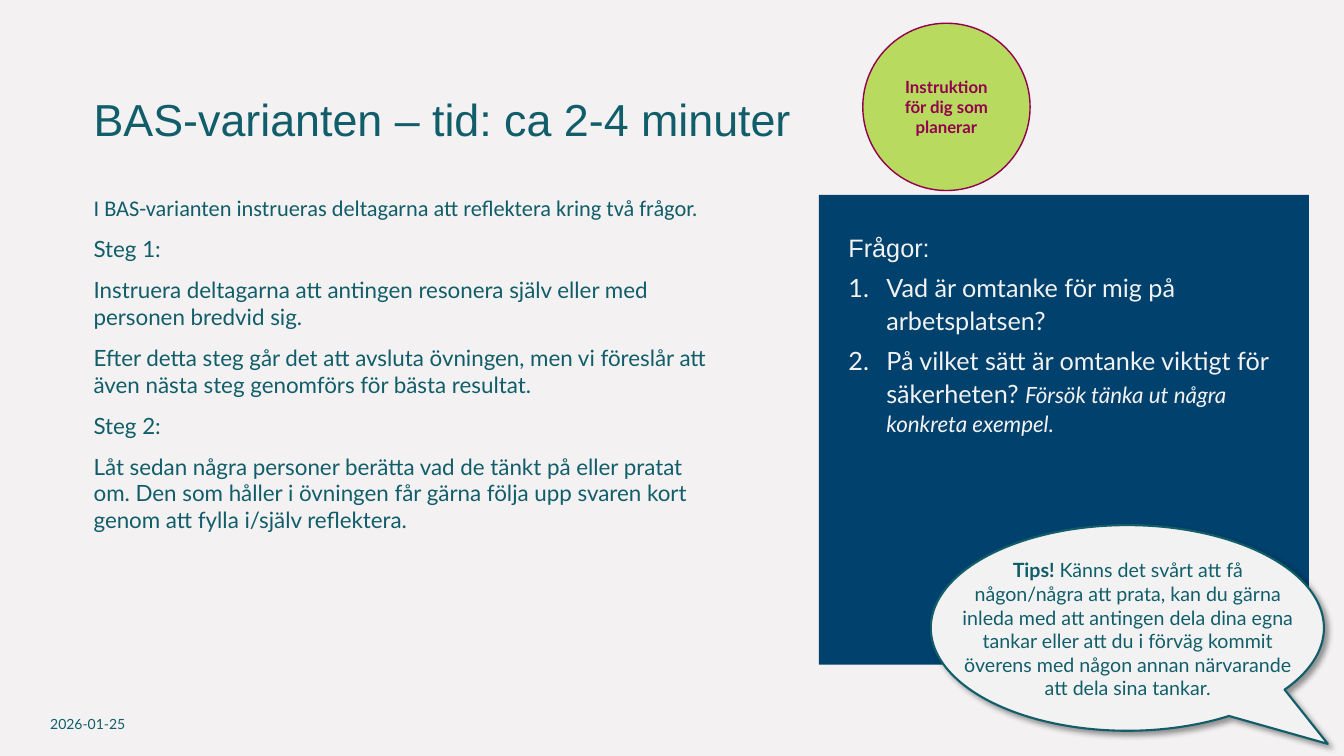
from lxml import etree
from pptx import Presentation
from pptx import util as u
from pptx.dml.color import RGBColor
from pptx.enum import shapes, text
from pptx.oxml.ns import qn

THEME = {
    "paper": "F3F1F1", "teal": "115E6A", "navy": "00416D", "light": "F2F2F2",
    "lime": "B8DA5E", "plum": "92004D", "shadow": "000000",
    "heading": "Arial", "body": "Lato", "intro": "Calibri",
    "title": 32, "question": 18, "text": 16, "tip": 14, "badge": 12, "date": 10,
}

TITLE = "BAS-varianten – tid: ca 2-4 minuter"
INTRO = "I BAS-varianten instrueras deltagarna att reflektera kring två frågor."
STEPS = [
    "Steg 1:",
    "Instruera deltagarna att antingen resonera själv eller med personen bredvid sig.",
    "Efter detta steg går det att avsluta övningen, men vi föreslår att även nästa "
    "steg genomförs för bästa resultat.",
    "Steg 2:",
    "Låt sedan några personer berätta vad de tänkt på eller pratat om. Den som håller "
    "i övningen får gärna följa upp svaren kort genom att fylla i/själv reflektera.",
]
QUESTIONS_HEADING = "Frågor:"
QUESTIONS = [
    ("Vad är omtanke för mig på arbetsplatsen?", ""),
    ("På vilket sätt är omtanke viktigt för säkerheten? ",
     "Försök tänka ut några konkreta exempel."),
]
TIP = ("Tips! ",
       "Känns det svårt att få någon/några att prata, kan du gärna inleda med att "
       "antingen dela dina egna tankar eller att du i förväg kommit överens med "
       "någon annan närvarande att dela sina tankar.")
BADGE = "Instruktion för dig som planerar"
DATE = "2026-01-25"

AREAS = {
    "title": (59.8, 61.9, 784, 70.6),
    "steps": (59.8, 121.7, 460, 342.7),
    "date": (28.8, 502.6, 88.6, 28.8),
    "panel": (584.9, 139.2, 350, 335.5),
    "questions": (599, 160.6, 329.8, 157.7),
    "callout": (664.9, 375.1, 280.8, 146.9),
    "tip": (676.1, 395.3, 259.2, 108.7),
    "badge": (616.3, 16.6, 119.5, 119.5),
}
NUMBER_INDENT = 27


def colour(name):
    return RGBColor.from_string(THEME[name])


def area(name):
    return [u.Pt(value) for value in AREAS[name]]


def add_text_frame(page, name):
    frame = page.shapes.add_textbox(*area(name)).text_frame
    frame.word_wrap = True
    return frame


def add_para(frame, index):
    return frame.paragraphs[0] if index == 0 else frame.add_paragraph()


def add_span(para, words, size, ink="teal", face="body", bold=False, italic=False):
    span = para.add_run()
    span.text = words
    font = span.font
    font.size, font.name = u.Pt(THEME[size]), THEME[face]
    font.bold, font.italic = bold, italic
    font.color.rgb = colour(ink)


def add_filled(page, kind, name, fill, line=None, width=0):
    shape = page.shapes.add_shape(kind, *area(name))
    shape.shadow.inherit = False
    shape.fill.solid()
    shape.fill.fore_color.rgb = colour(fill)
    if line:
        shape.line.color.rgb = colour(line)
        shape.line.width = u.Pt(width)
    else:
        shape.line.fill.background()
    return shape


def add_shadow(shape):
    effects = shape._element.spPr.find(qn("a:effectLst"))
    shadow = etree.SubElement(effects, qn("a:outerShdw"), blurRad=str(u.Pt(4)),
                              dist=str(u.Pt(3)), dir=str(45 * 60000),
                              algn="tl", rotWithShape="0")
    tint = etree.SubElement(shadow, qn("a:srgbClr"), val=THEME["shadow"])
    etree.SubElement(tint, qn("a:alpha"), val="40000")


def number_para(para):
    props = para._p.get_or_add_pPr()
    props.set("marL", str(u.Pt(NUMBER_INDENT)))
    props.set("indent", str(-u.Pt(NUMBER_INDENT)))
    etree.SubElement(props, qn("a:buFont"), typeface=THEME["body"])
    etree.SubElement(props, qn("a:buAutoNum"), type="arabicPeriod")


def add_steps(page):
    frame = add_text_frame(page, "steps")
    frame.margin_top = u.Pt(17.3)
    for index, words in enumerate([INTRO] + STEPS):
        para = add_para(frame, index)
        para.space_before = u.Pt(10 if index else 0)
        add_span(para, words, "text", face="body" if index else "intro")


def add_questions(page):
    add_filled(page, shapes.MSO_SHAPE.RECTANGLE, "panel", "navy")
    frame = add_text_frame(page, "questions")
    for index, (words, hint) in enumerate([(QUESTIONS_HEADING, "")] + QUESTIONS):
        para = add_para(frame, index)
        para.line_spacing = 1.07
        para.space_after = u.Pt(6)
        if index:
            number_para(para)
        add_span(para, words, "question", "light", "body" if index else "heading")
        if hint:
            add_span(para, hint, "text", "light", italic=True)


def add_tip(page):
    callout = add_filled(page, shapes.MSO_SHAPE.OVAL_CALLOUT, "callout",
                         "light", "teal", 1.5)
    callout.adjustments[0] = 0.51
    callout.adjustments[1] = 0.564
    add_shadow(callout)
    para = add_text_frame(page, "tip").paragraphs[0]
    para.alignment = text.PP_ALIGN.CENTER
    lead, advice = TIP
    add_span(para, lead, "tip", bold=True)
    add_span(para, advice, "tip")


def add_badge(page):
    badge = add_filled(page, shapes.MSO_SHAPE.OVAL, "badge", "lime", "plum", 1)
    frame = badge.text_frame
    frame.word_wrap = True
    frame.vertical_anchor = text.MSO_ANCHOR.MIDDLE
    para = frame.paragraphs[0]
    para.alignment = text.PP_ALIGN.CENTER
    add_span(para, BADGE, "badge", "plum", bold=True)


def main():
    deck = Presentation()
    deck.slide_width, deck.slide_height = u.Pt(960), u.Pt(540)
    page = deck.slides.add_slide(deck.slide_layouts[6])
    page.background.fill.solid()
    page.background.fill.fore_color.rgb = colour("paper")

    add_steps(page)
    date = add_text_frame(page, "date")
    date.vertical_anchor = text.MSO_ANCHOR.MIDDLE
    add_span(date.paragraphs[0], DATE, "date")
    title = add_text_frame(page, "title")
    add_span(title.paragraphs[0], TITLE, "title", face="heading")
    add_questions(page)
    add_tip(page)
    add_badge(page)
    deck.save("out.pptx")


if __name__ == "__main__":
    main()
